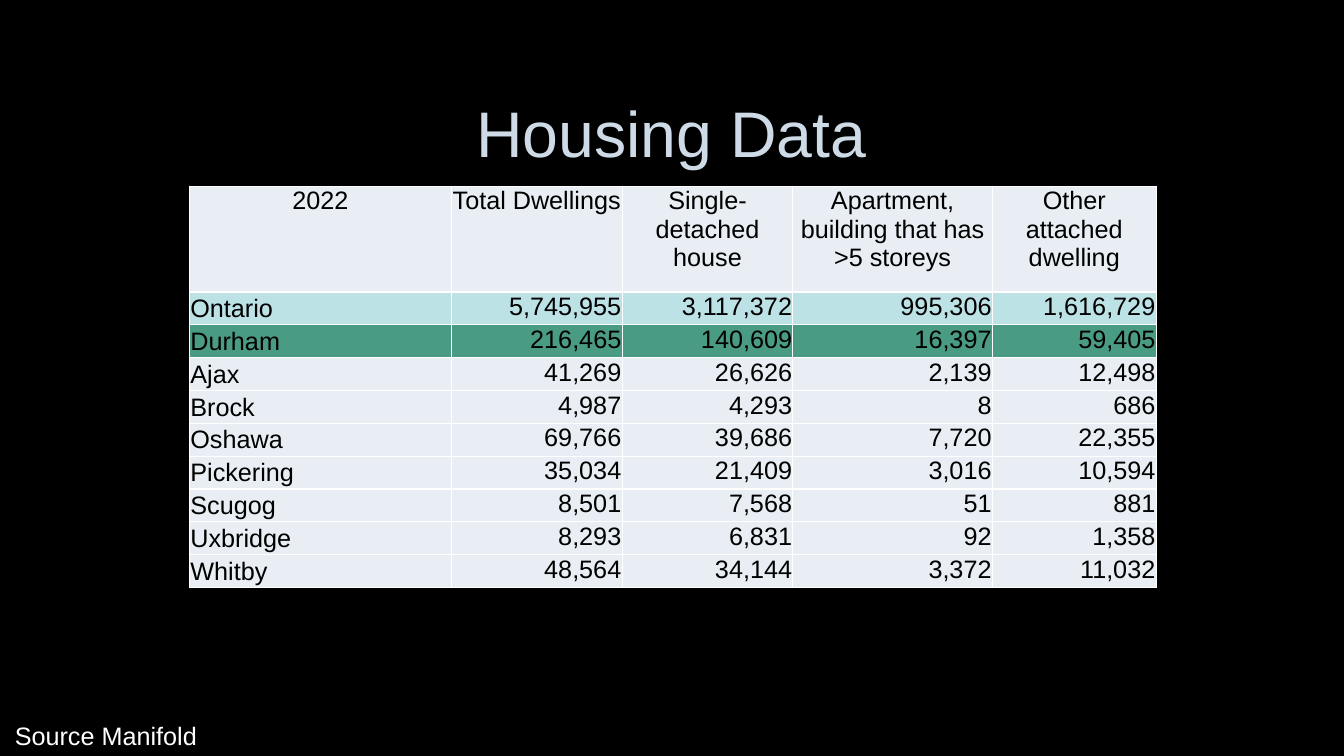
"""Build the housing data slide."""
from dataclasses import dataclass
from lxml.etree import SubElement as Sub
from pptx import Presentation as Deck
from pptx.dml.color import RGBColor as Rgb
from pptx.enum.text import MSO_ANCHOR as Anchor, PP_ALIGN as Align
from pptx.oxml import parse_xml
from pptx.oxml.ns import nsdecls, qn
from pptx.util import Pt


@dataclass(frozen=True)
class Theme:
    font: str = "Arial"
    back: str = "000000"
    head: str = "CEDBE6"
    edge: str = "404040"
    ink: str = "000000"
    white: str = "FFFFFF"
    pale: str = "E8EEF3"
    aqua: str = "BCE2E6"
    green: str = "4A9B83"
    big: float = 46
    body: float = 18


class Page:
    def __init__(self, deck, theme):
        self.theme = theme
        self.slide = deck.slides.add_slide(deck.slide_layouts[5])
        fill = self.slide.background.fill
        fill.solid()
        fill.fore_color.rgb = Rgb.from_string(theme.back)

    def text(self, frame, words, size, color, align=Align.LEFT):
        para = frame.paragraphs[0]
        para.alignment = align
        run = para.add_run()
        run.text = words
        run.font.name = self.theme.font
        run.font.size = Pt(size)
        run.font.color.rgb = Rgb.from_string(color)
        return run

    def title(self, words, left, top, width, height):
        shape = self.slide.shapes.title
        shape.left, shape.top = Pt(left), Pt(top)
        shape.width, shape.height = Pt(width), Pt(height)
        frame = shape.text_frame
        frame.vertical_anchor = Anchor.MIDDLE
        run = self.text(frame, words, self.theme.big, self.theme.head, Align.CENTER)
        frame.paragraphs[0].line_spacing = 0.9
        line = parse_xml(
            f'<a:ln {nsdecls("a")} w="{Pt(0.75)}"><a:solidFill>'
            f'<a:srgbClr val="{self.theme.edge}"><a:alpha val="10000"/></a:srgbClr>'
            "</a:solidFill></a:ln>")
        run.font._element.insert(0, line)

    def label(self, words, left, top, width, height):
        box = self.slide.shapes.add_textbox(Pt(left), Pt(top), Pt(width), Pt(height))
        box.text_frame.word_wrap = False
        self.text(box.text_frame, words, self.theme.body, self.theme.white)

    def border(self, cell):
        props = cell._tc.get_or_add_tcPr()
        for side in ("lnL", "lnR", "lnT", "lnB"):
            line = Sub(props, qn(f"a:{side}"), w=str(Pt(1)))
            paint = Sub(line, qn("a:solidFill"))
            Sub(paint, qn("a:srgbClr"), val=self.theme.white)

    def cell(self, cell, words, color, align, anchor):
        self.border(cell)
        cell.fill.solid()
        cell.fill.fore_color.rgb = Rgb.from_string(color)
        cell.margin_left = cell.margin_right = cell.margin_top = Pt(0.6)
        cell.margin_bottom = 0
        cell.vertical_anchor = anchor
        self.text(cell.text_frame, words, self.theme.body, self.theme.ink, align)

    def table(self, rows, left, top, widths, heights, tints):
        grid = self.slide.shapes.add_table(
            len(rows), len(widths), Pt(left), Pt(top),
            Pt(sum(widths)), Pt(sum(heights))).table
        grid.first_row = grid.horz_banding = False
        for col, width in zip(grid.columns, widths):
            col.width = Pt(width)
        for r, row in enumerate(rows):
            grid.rows[r].height = Pt(heights[r])
            for c, words in enumerate(row):
                name = r > 0 and c == 0
                align = Align.CENTER if r == 0 else Align.LEFT if name else Align.RIGHT
                anchor = Anchor.MIDDLE if name else Anchor.TOP
                self.cell(grid.cell(r, c), words, tints.get(row[0], self.theme.pale),
                          align, anchor)


ROWS = [
    ("2022", "Total Dwellings", "Single-detached house",
     "Apartment, building that has >5 storeys", "Other attached dwelling"),
    ("Ontario", "5,745,955", "3,117,372", "995,306", "1,616,729"),
    ("Durham", "216,465", "140,609", "16,397", "59,405"),
    ("Ajax", "41,269", "26,626", "2,139", "12,498"),
    ("Brock", "4,987", "4,293", "8", "686"),
    ("Oshawa", "69,766", "39,686", "7,720", "22,355"),
    ("Pickering", "35,034", "21,409", "3,016", "10,594"),
    ("Scugog", "8,501", "7,568", "51", "881"),
    ("Uxbridge", "8,293", "6,831", "92", "1,358"),
    ("Whitby", "48,564", "34,144", "3,372", "11,032"),
]


def main():
    deck = Deck()
    deck.slide_width, deck.slide_height = Pt(960), Pt(540)
    theme = Theme()
    page = Page(deck, theme)
    page.title("Housing Data", 72, 48, 815, 99.5)
    page.table(ROWS, 135.4, 133, [187, 122, 122, 142.5, 117],
               [75.6] + [23.45] * (len(ROWS) - 1),
               {"Ontario": theme.aqua, "Durham": theme.green})
    page.label("Source Manifold", 3.5, 511, 145.5, 29)
    deck.save("out.pptx")


if __name__ == "__main__":
    main()
